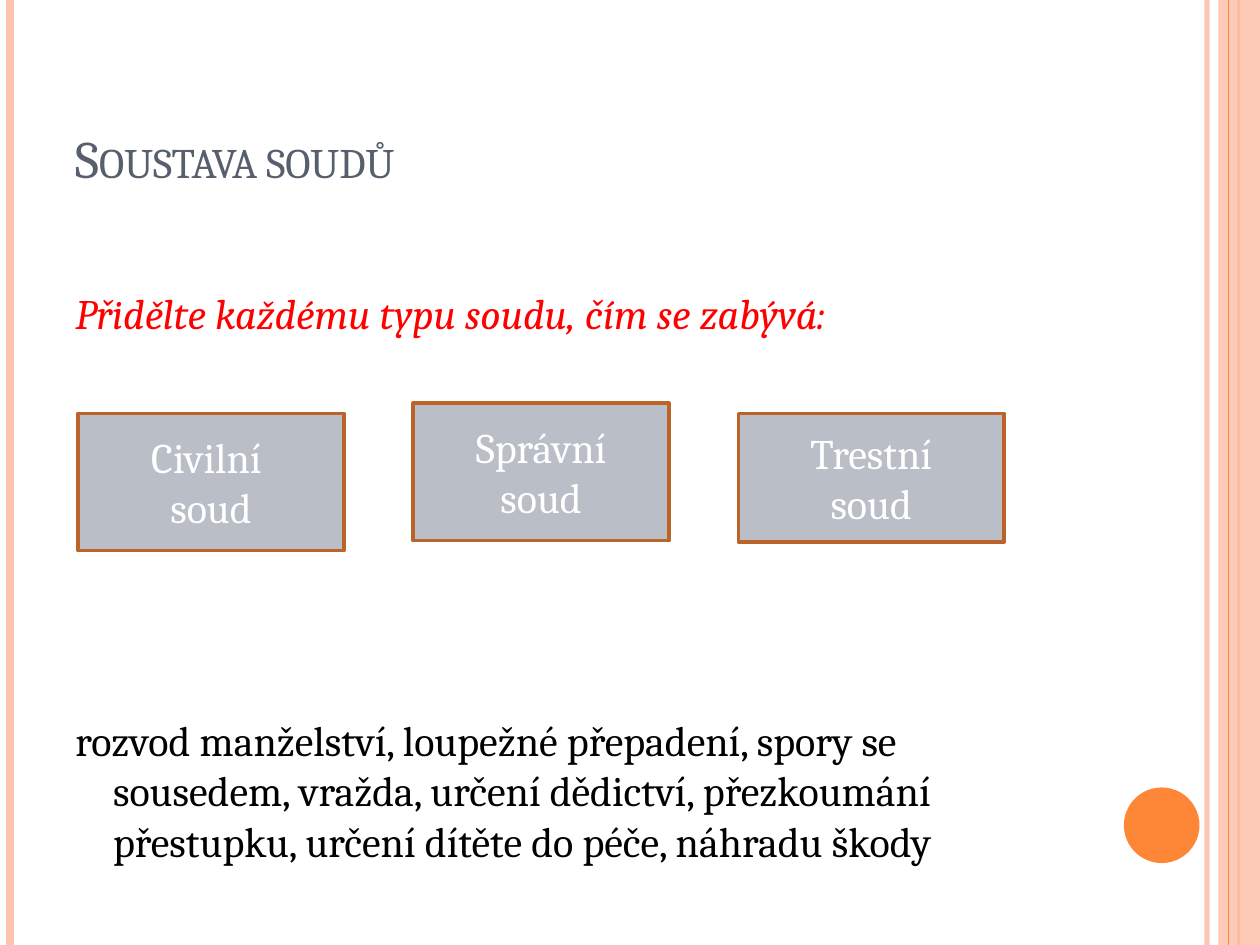
"""Build a slide on the court system with three court types to match."""
import pptx
import pptx.util
import pptx.dml.color
import pptx.enum.shapes
import pptx.enum.text
import pptx.oxml.ns
import lxml.etree

Inches = pptx.util.Inches
Pt = pptx.util.Pt
RGBColor = pptx.dml.color.RGBColor
Shapes = pptx.enum.shapes.MSO_SHAPE
Anchor = pptx.enum.text.MSO_ANCHOR
qn = pptx.oxml.ns.qn

PEACH = RGBColor(0xFE, 0xC3, 0xAE)
ORANGE = RGBColor(0xFE, 0x86, 0x37)
BROWN = RGBColor(0xBC, 0x63, 0x29)
GRAY = RGBColor(0xB9, 0xBE, 0xC7)
SLATE = RGBColor(0x57, 0x5F, 0x6D)
RED = RGBColor(0xFF, 0x00, 0x00)
BLACK = RGBColor(0x00, 0x00, 0x00)
WHITE = RGBColor(0xFF, 0xFF, 0xFF)


def add_stripe(x, color, width, opacity=100):
    stripe = page.shapes.add_connector(
        pptx.enum.shapes.MSO_CONNECTOR.STRAIGHT, Inches(x), 0, Inches(x), deck.slide_height)
    stripe.line.color.rgb = color
    stripe.line.width = Pt(width)
    lxml.etree.SubElement(stripe._element.spPr, qn("a:effectLst"))
    set_opacity(stripe, opacity)


def set_opacity(shape, percent):
    if percent < 100:
        color = next(shape._element.spPr.iter(qn("a:srgbClr")))
        lxml.etree.SubElement(color, qn("a:alpha"), val=str(percent * 1000))


deck = pptx.Presentation()
deck.slide_width = Inches(10)
deck.slide_height = Inches(7.5)
page = deck.slides.add_slide(deck.slide_layouts[6])

add_stripe(9.58, PEACH, 3, 93)
add_stripe(0.08, PEACH, 4.5)
add_stripe(9.83, ORANGE, 1.5)

band = page.shapes.add_shape(Shapes.RECTANGLE, Inches(9.67), 0, Inches(0.33), deck.slide_height)
dot = page.shapes.add_shape(
    Shapes.OVAL, Inches(8.92), Inches(6.25), Inches(0.6), Inches(0.6))
for shape, color in ((band, PEACH), (dot, ORANGE)):
    shape.shadow.inherit = False
    shape.fill.solid()
    shape.fill.fore_color.rgb = color
    shape.line.fill.background()
set_opacity(band, 87)
add_stripe(9.75, ORANGE, 0.75)

texts = [
    ("Soustava soudů", 0.3, 1.25, 30, SLATE),
    ("Přidělte každému typu soudu, čím se zabývá:", 2.23, 0.5, 24, RED),
    ("rozvod manželství, loupežné přepadení, spory se sousedem, vražda, určení dědictví, "
     "přezkoumání přestupku, určení dítěte do péče, náhradu škody", 5.62, 1.3, 24, BLACK),
]
for text, top, height, size, color in texts:
    box = page.shapes.add_textbox(Inches(0.5), Inches(top), Inches(8.17), Inches(height))
    box.text_frame.word_wrap = True
    para = box.text_frame.paragraphs[0]
    para.text = text
    para.font.name = "Cambria"
    para.font.size = Pt(size)
    para.font.color.rgb = color
    if color == SLATE:
        box.text_frame.vertical_anchor = Anchor.BOTTOM
        para.runs[0].font._element.set("cap", "small")
    else:
        para.font.italic = color == RED
        indent = para._p.get_or_add_pPr()
        indent.set("marL", str(Inches(0.3)))
        indent.set("indent", str(Inches(-0.3)))

courts = [
    ("Civilní ", 0.62, 3.28, 2.11, 1.09),
    ("Správní", 3.28, 3.2, 2.03, 1.09),
    ("Trestní", 5.86, 3.28, 2.11, 1.02),
]
for kind, *place in courts:
    court = page.shapes.add_shape(Shapes.RECTANGLE, *map(Inches, place))
    court.shadow.inherit = False
    court.fill.solid()
    court.fill.fore_color.rgb = GRAY
    court.line.color.rgb = BROWN
    court.line.width = Pt(2)
    court.text_frame.text = f"{kind}\nsoud"
    court.text_frame.vertical_anchor = Anchor.MIDDLE
    for para in court.text_frame.paragraphs:
        para.alignment = pptx.enum.text.PP_ALIGN.CENTER
        para.font.name = "Cambria"
        para.font.size = Pt(24)
        para.font.color.rgb = WHITE

deck.save("out.pptx")
